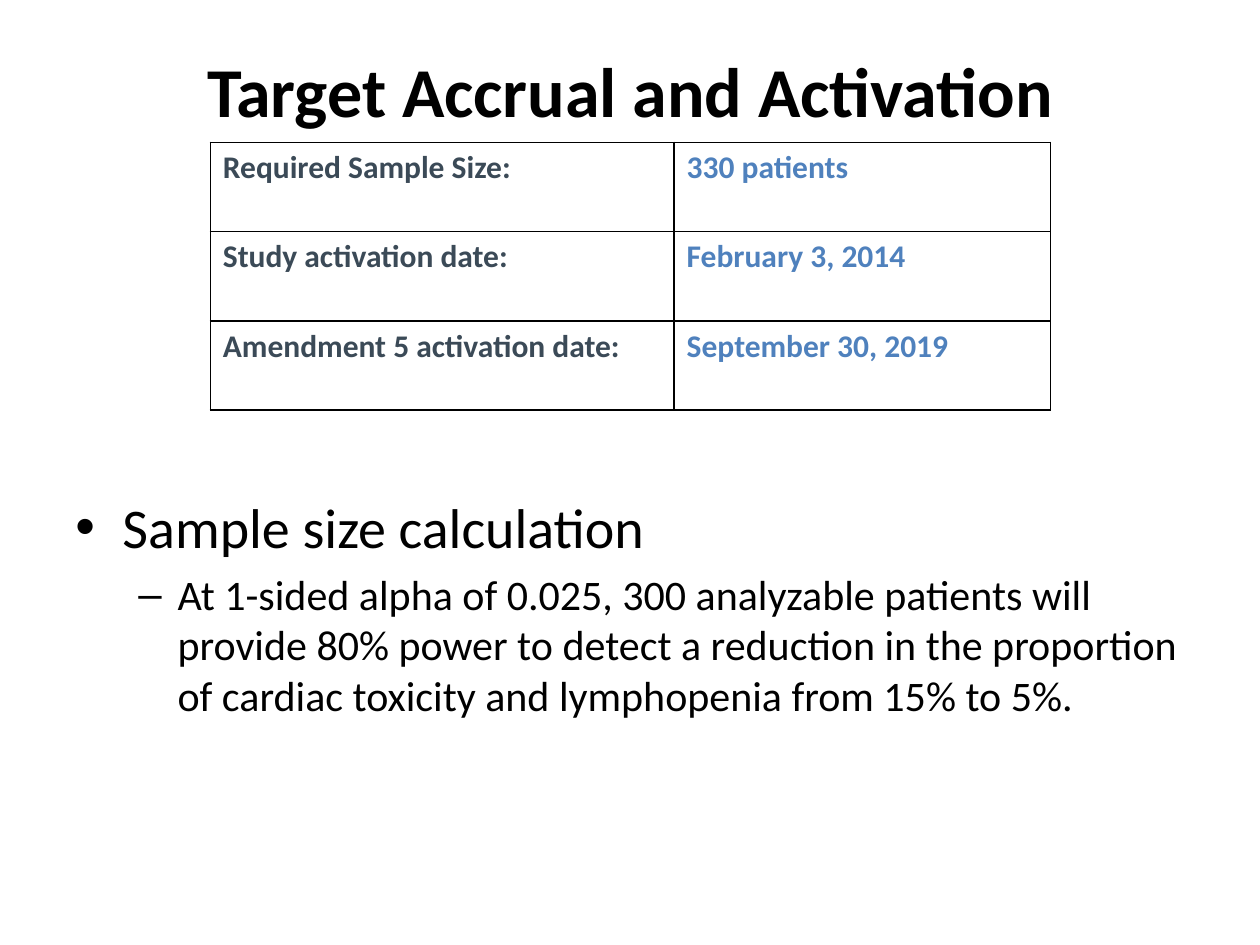
"""Build the Target Accrual and Activation slide."""
from lxml.etree import SubElement
from pptx import Presentation
from pptx.dml.color import RGBColor as RGB
from pptx.enum.text import MSO_ANCHOR as ANCHOR, PP_ALIGN as ALIGN
from pptx.oxml.ns import qn
from pptx.util import Cm, Pt

COLORS = {"text": "000000", "label": "3B4A57", "value": "4F81BD", "border": "000000", "bg": "FFFFFF"}


def add_run(p, text, size, color, bold=False):
    r = p.add_run()
    r.text = text
    r.font.name = "Calibri"
    r.font.size = Pt(size)
    r.font.bold = bold
    r.font.color.rgb = RGB.from_string(COLORS[color])


def add_box(left, top, width, height):
    tf = s.shapes.add_textbox(Cm(left), Cm(top), Cm(width), Cm(height)).text_frame
    tf.word_wrap = True
    tf.vertical_anchor = ANCHOR.TOP
    tf.margin_top = Cm(0.2)
    return tf


prs = Presentation()
prs.slide_width, prs.slide_height = Cm(25.4), Cm(19.05)
s = prs.slides.add_slide(prs.slide_layouts[6])
s.background.fill.solid()
s.background.fill.fore_color.rgb = RGB.from_string(COLORS["bg"])

p = add_box(1.27, 0.76, 22.86, 4.09).paragraphs[0]
p.alignment = ALIGN.CENTER
add_run(p, "Target Accrual and Activation", 40, "text", True)

rows = [
    ("Required Sample Size:", "330 patients"),
    ("Study activation date:", "February 3, 2014"),
    ("Amendment 5 activation date:", "September 30, 2019"),
]
row_height = 1.8
table = s.shapes.add_table(
    len(rows), 2, Cm(4.24), Cm(2.87), Cm(16.94), Cm(row_height * len(rows))
).table
table.first_row = table.horz_banding = False
for column, width in zip(table.columns, (9.35, 7.59)):
    column.width = Cm(width)
for i, row in enumerate(rows):
    table.rows[i].height = Cm(row_height)
    for j, (text, color) in enumerate(zip(row, ("label", "value"))):
        cell = table.cell(i, j)
        add_run(cell.text_frame.paragraphs[0], text, 18, color, True)
        tcPr = cell._tc.get_or_add_tcPr()
        for side in ("a:lnL", "a:lnR", "a:lnT", "a:lnB"):
            ln = SubElement(tcPr, qn(side), w=str(Pt(1)))
            fill = SubElement(ln, qn("a:solidFill"))
            SubElement(fill, qn("a:srgbClr"), val=COLORS["border"])
        cell.fill.background()

bullets = [
    ("•", "Sample size calculation", 32, 0, 0.95, 0.95, 0),
    ("–", "At 1-sided alpha of 0.025, 300 analyzable patients will provide 80% power to detect "
     "a reduction in the proportion of cardiac toxicity and lymphopenia from 15% to 5%.",
     24, 1, 2.06, 0.79, 5),
]
tf = add_box(1.27, 9.73, 23.06, 4.65)
for i, (mark, text, size, level, indent, hanging, before) in enumerate(bullets):
    p = tf.add_paragraph() if i else tf.paragraphs[0]
    p.level = level
    p.space_before = Pt(before)
    pPr = p._p.get_or_add_pPr()
    pPr.set("marL", str(Cm(indent)))
    pPr.set("indent", str(-Cm(hanging)))
    SubElement(pPr, qn("a:buFont"), typeface="Arial")
    SubElement(pPr, qn("a:buChar"), char=mark)
    add_run(p, text, size, "text")

prs.save("out.pptx")
